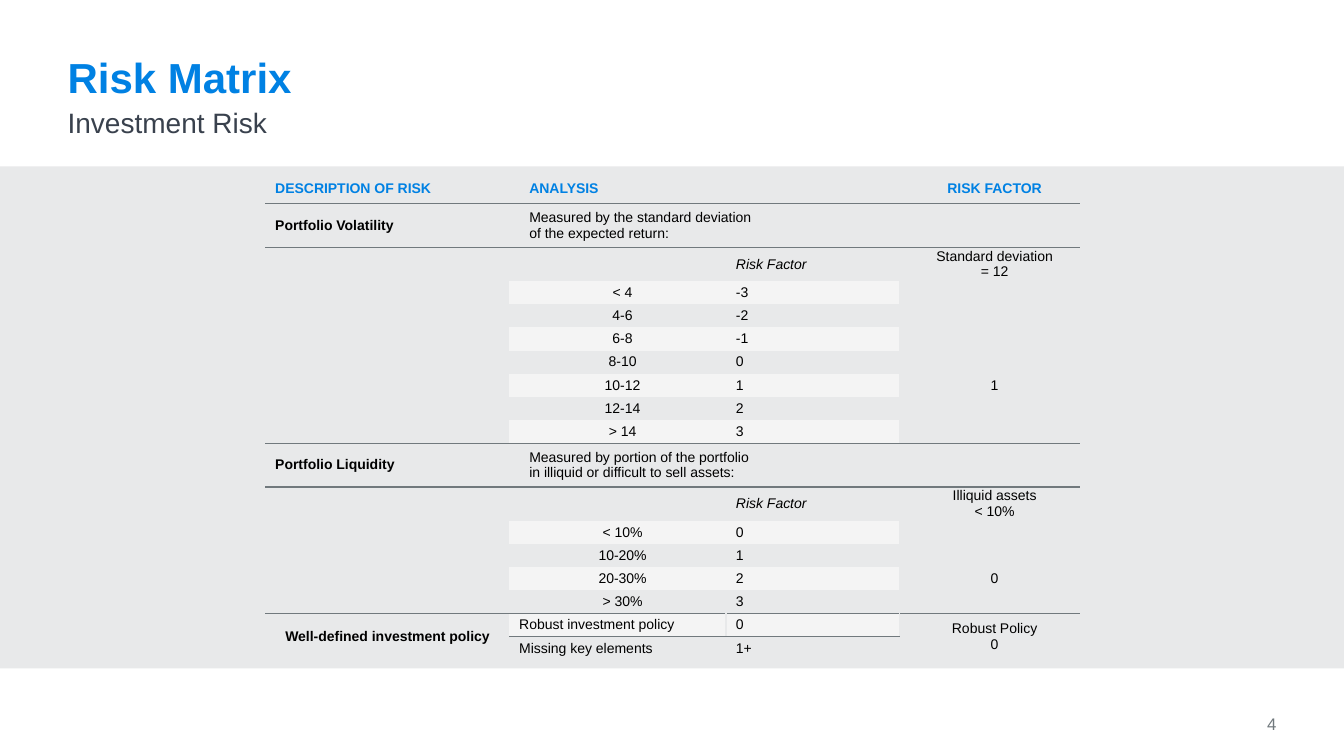
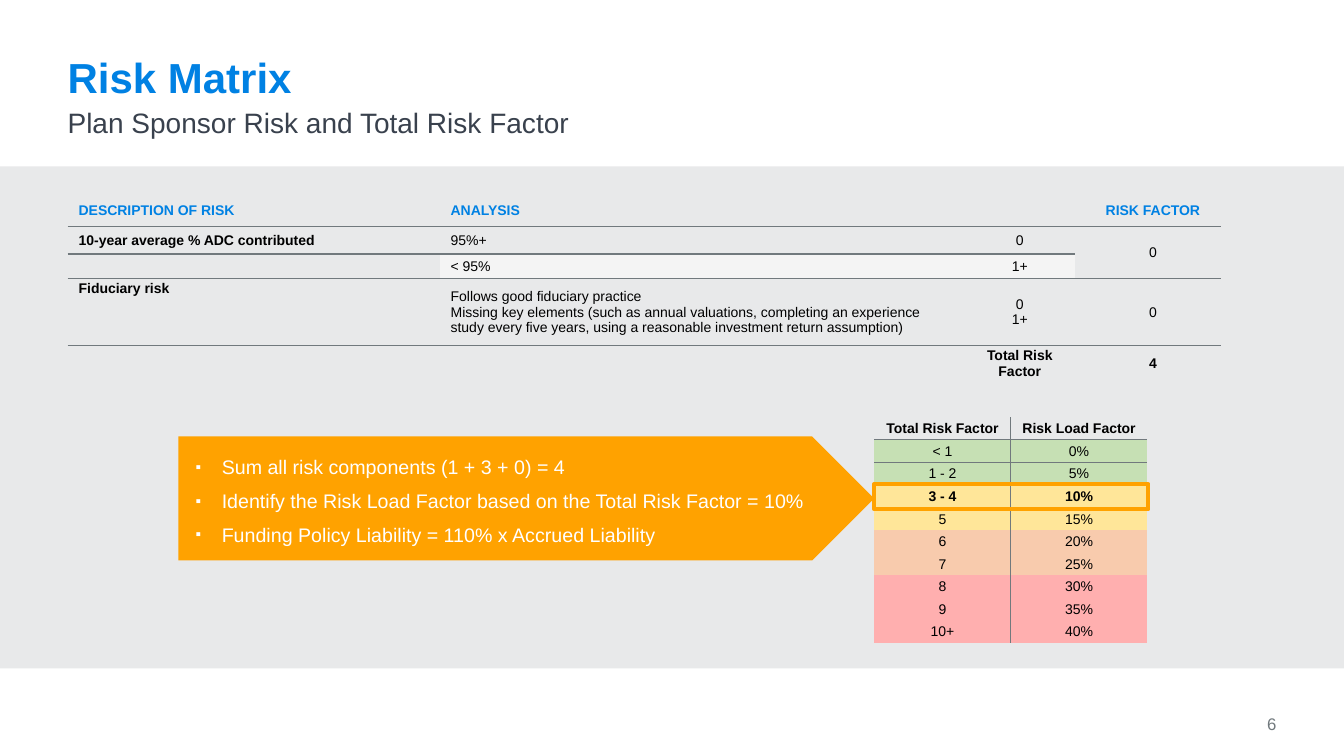
from dataclasses import dataclass, replace
from typing import NamedTuple, Optional, Sequence

from lxml import etree
from pptx import Presentation
from pptx import util as u
from pptx.dml.color import RGBColor
from pptx.enum import shapes, text
from pptx.oxml.ns import qn

SLIDE_W, SLIDE_H = 13.33, 7.5
MARGIN = 0.67
FONT = "Arial"
BLUE, SLATE, GREY, BLACK, WHITE = "0081E3", "39414D", "71797D", "000000", "FFFFFF"
PANEL, STRIPE, ORANGE = "E8E9EA", "F4F4F4", "FFA200"
GREEN, YELLOW, PEACH, RED = "C6E0B4", "FFE699", "F8CBAD", "FFAFAF"
PLAIN_TABLE = "{2D5ABB26-0587-4C30-8999-92F81FD0307C}"
LEFT, CENTER, RIGHT = text.PP_ALIGN.LEFT, text.PP_ALIGN.CENTER, text.PP_ALIGN.RIGHT
TOP, MIDDLE, BOTTOM = text.MSO_ANCHOR.TOP, text.MSO_ANCHOR.MIDDLE, text.MSO_ANCHOR.BOTTOM


class Box(NamedTuple):
    left: float
    top: float
    width: float
    height: float

    def lengths(self) -> list:
        return [u.Inches(value) for value in self]


class Style(NamedTuple):
    size: float
    color: str
    bold: bool = False
    italic: bool = False


class Rule(NamedTuple):
    """A line after a row ("B") or a column ("R"), over the given cells."""
    side: str
    edge: int
    cells: Sequence[int]
    color: str = GREY


@dataclass(frozen=True)
class Cell:
    words: str = ""
    align: text.PP_ALIGN = LEFT
    bold: bool = False
    italic: bool = False
    color: str = BLACK
    fill: Optional[str] = None
    margins: Optional[tuple] = None
    anchor: text.MSO_ANCHOR = MIDDLE
    rows: int = 1
    cols: int = 1


@dataclass(frozen=True)
class Grid:
    left: float
    top: float
    columns: list
    rows: list
    cells: list
    rules: list
    margins: tuple
    indent: float = 0.1


EMPTY = Cell()
ROOMY = (0.1, 0.05, 0.1, 0.05)
TIGHT = (0.01, 0.01, 0.01, 0)
FLUSH = (0, 0, 0, 0)
TITLE, SUBTITLE = Style(30, BLUE, True), Style(20, SLATE)
PAGE_NUMBER, CALLOUT = Style(12, GREY), Style(14, WHITE)


def rgb(color: str) -> RGBColor:
    return RGBColor.from_string(color)


def write(paragraph, words: str, style: Style) -> None:
    """Fill a paragraph; line breaks and empty ends take the same size."""
    paragraph.text = words
    for run in paragraph.runs:
        formats = dict(name=FONT, size=u.Pt(style.size), bold=style.bold, italic=style.italic)
        for key, value in formats.items():
            setattr(run.font, key, value)
        run.font.color.rgb = rgb(style.color)
    size = str(int(style.size * 100))
    for line_break in paragraph._p.findall(qn("a:br")):
        etree.SubElement(line_break, qn("a:rPr"), sz=size)
    etree.SubElement(paragraph._p, qn("a:endParaRPr"), sz=size)


def set_margins(target, margins: tuple) -> None:
    for side, value in zip(("left", "top", "right", "bottom"), margins):
        setattr(target, f"margin_{side}", u.Inches(value))


def add_text(slide, box: Box, lines: list, style: Style, align=LEFT, anchor=TOP,
             spacing: float = 1, bullet: str = "") -> None:
    frame = slide.shapes.add_textbox(*box.lengths()).text_frame
    frame.word_wrap = True
    frame.vertical_anchor = anchor
    set_margins(frame, FLUSH)
    for number, line in enumerate(lines):
        paragraph = frame.add_paragraph() if number else frame.paragraphs[0]
        if bullet:
            add_bullet(paragraph, bullet, style.color)
        paragraph.alignment = align
        paragraph.line_spacing = spacing
        if number:
            paragraph.space_before = u.Pt(9)
        write(paragraph, line, style)


def add_bullet(paragraph, mark: str, color: str) -> None:
    properties = paragraph._p.get_or_add_pPr()
    indent = u.Inches(0.26)
    properties.set("marL", str(indent))
    properties.set("indent", str(-indent))
    bullet_color = etree.SubElement(properties, qn("a:buClr"))
    etree.SubElement(bullet_color, qn("a:srgbClr"), val=color)
    etree.SubElement(properties, qn("a:buSzPct"), val="80000")
    etree.SubElement(properties, qn("a:buFont"), typeface=FONT)
    etree.SubElement(properties, qn("a:buChar"), char=mark)


def add_block(slide, kind, box: Box, fill: Optional[str] = None,
              line: Optional[str] = None) -> None:
    block = slide.shapes.add_shape(kind, *box.lengths())
    block.shadow.inherit = False
    if fill:
        block.fill.solid()
        block.fill.fore_color.rgb = rgb(fill)
    else:
        block.fill.background()
    if line:
        block.line.color.rgb = rgb(line)
        block.line.width = u.Pt(3)
    else:
        block.line.fill.background()


def add_border(cell, side: str, color: str) -> None:
    properties = cell._tc.get_or_add_tcPr()
    border = etree.Element(qn(f"a:ln{side}"), w=str(u.Pt(1)))
    fill = etree.SubElement(border, qn("a:solidFill"))
    etree.SubElement(fill, qn("a:srgbClr"), val=color)
    properties.insert(sum("}ln" in child.tag for child in properties), border)


def draw_rule(table, rule: Rule) -> None:
    """Set the line on both cells that share the edge."""
    for position in rule.cells:
        for step, side in enumerate("BT" if rule.side == "B" else "RL"):
            edge = rule.edge + step
            row, column = (edge, position) if rule.side == "B" else (position, edge)
            add_border(table.cell(row, column), side, rule.color)


def fill_cell(target, cell: Cell, grid: Grid) -> None:
    set_margins(target, cell.margins or (grid.margins if cell.words else FLUSH))
    target.vertical_anchor = cell.anchor
    paragraph = target.text_frame.paragraphs[0]
    paragraph.alignment = cell.align
    paragraph._p.get_or_add_pPr().set("marL", str(u.Inches(grid.indent)))
    write(paragraph, cell.words, Style(10, cell.color, cell.bold, cell.italic))
    if cell.fill:
        target.fill.solid()
        target.fill.fore_color.rgb = rgb(cell.fill)
    else:
        target.fill.background()


def add_grid(slide, grid: Grid) -> None:
    box = Box(grid.left, grid.top, sum(grid.columns), sum(grid.rows))
    table = slide.shapes.add_table(len(grid.rows), len(grid.columns), *box.lengths()).table
    table.first_row = table.horz_banding = False
    table._tbl.tblPr.find(qn("a:tableStyleId")).text = PLAIN_TABLE
    for column, width in zip(table.columns, grid.columns):
        column.width = u.Inches(width)
    for row, height in zip(table.rows, grid.rows):
        row.height = u.Inches(height)
    for r, line in enumerate(grid.cells):
        for c, cell in enumerate(line):
            target = table.cell(r, c)
            fill_cell(target, cell, grid)
            if cell.rows * cell.cols > 1:
                target.merge(table.cell(r + cell.rows - 1, c + cell.cols - 1))
    for rule in grid.rules:
        draw_rule(table, rule)


def start_slide(deck, subtitle: str, number: str):
    slide = deck.slides.add_slide(deck.slide_layouts[6])
    add_block(slide, shapes.MSO_SHAPE.RECTANGLE,
              Box(0, SLIDE_H * 0.22, SLIDE_W, 4.98), PANEL)
    width = SLIDE_W - 2 * MARGIN
    add_text(slide, Box(MARGIN, 0.57, width, 0.45), ["Risk Matrix"], TITLE, spacing=0.9)
    add_text(slide, Box(MARGIN, 1.08, width, 0.61), [subtitle], SUBTITLE, spacing=0.9)
    add_text(slide, Box(12.08, 7.03, 0.58, 0.25), [number], PAGE_NUMBER, RIGHT, BOTTOM)
    return slide


def heading_row(analysis_margins: tuple) -> list:
    heading = Cell(bold=True, color=BLUE)
    return [replace(heading, words="DESCRIPTION OF RISK"),
            replace(heading, words="ANALYSIS", cols=2, margins=analysis_margins), EMPTY,
            replace(heading, words="RISK FACTOR", align=CENTER)]


def risk_section(name: str, measure: str, finding: str, ranges: list, first: int,
                 chosen: int) -> list:
    """Rows of one risk: its measure, then ranges with rising factors."""
    rows = [[Cell(name, bold=True), Cell(measure, cols=2, margins=ROOMY), EMPTY, EMPTY],
            [EMPTY, EMPTY, Cell("Risk Factor", italic=True), Cell(finding, CENTER)]]
    for step, limits in enumerate(ranges):
        fill = None if step % 2 else STRIPE
        factor = str(first + step)
        rows.append([EMPTY, Cell(limits, CENTER, fill=fill), Cell(factor, fill=fill),
                     Cell(factor, CENTER) if step == chosen else EMPTY])
    return rows


def investment_slide(deck) -> None:
    slide = start_slide(deck, "Investment Risk", "4")
    volatility = risk_section(
        "Portfolio Volatility", "Measured by the standard deviation\nof the expected return:",
        "Standard deviation\n= 12",
        ["< 4", "4-6", "6-8", "8-10", "10-12", "12-14", "> 14"], -3, 4)
    liquidity = risk_section(
        "Portfolio Liquidity",
        "Measured by portion of the portfolio\nin illiquid or difficult to sell assets:",
        "Illiquid assets\n< 10%", ["< 10%", "10-20%", "20-30%", "> 30%"], 0, 2)
    # The chosen liquidity range scores zero on the summary side.
    liquidity[4][3] = Cell("0", CENTER)
    policy = [
        [Cell("Well-defined investment policy", bold=True, margins=ROOMY, rows=2),
         Cell("Robust investment policy", fill=STRIPE), Cell("0", fill=STRIPE),
         Cell("Robust Policy\n0", CENTER, margins=ROOMY, rows=2)],
        [EMPTY, Cell("Missing key elements"), Cell("1+"), EMPTY]]
    section, step = [0.41, 0.33], 0.23
    add_grid(slide, Grid(
        2.63, 1.73, [2.42, 2.15, 1.72, 1.79],
        [0.29] + section + [step] * 7 + section + [step] * 6,
        [heading_row(ROOMY)] + volatility + liquidity + policy,
        [Rule("R", 1, [16], PANEL)] + [Rule("B", row, range(4)) for row in (0, 9, 15)],
        FLUSH))


def sponsor_slide(deck) -> None:
    slide = start_slide(deck, "Plan Sponsor Risk and Total Risk Factor", "6")
    loads = [("< 1", "0%", GREEN), ("1 - 2", "5%", GREEN), ("3 - 4", "10%", YELLOW),
             ("5", "15%", YELLOW), ("6", "20%", PEACH), ("7", "25%", PEACH),
             ("8", "30%", RED), ("9", "35%", RED), ("10+", "40%", RED)]
    chosen, load_left, load_top, load_step = 3, 8.67, 4.14, 2.24 / 10
    load_cells = [[Cell(head, CENTER, True) for head in ("Total Risk Factor", "Risk Load Factor")]]
    for row, (factor, load, fill) in enumerate(loads, 1):
        load_cells.append([Cell(words, CENTER, row == chosen, fill=fill)
                           for words in (factor, load)])
    add_grid(slide, Grid(load_left, load_top, [2.71 / 2] * 2, [load_step] * 10, load_cells,
                         [Rule("R", 0, range(10)), Rule("B", 0, range(2))], TIGHT, 0))

    add_block(slide, shapes.MSO_SHAPE.PENTAGON, Box(1.77, 4.33, 6.9, 1.23), ORANGE)
    add_text(slide, Box(1.94, 4.54, 6.2, 0.9),
             ["Sum all risk components (1 + 3 + 0) = 4",
              "Identify the Risk Load Factor based on the Total Risk Factor = 10%",
              "Funding Policy Liability = 110% x Accrued Liability"],
             CALLOUT, spacing=0.9, bullet="▪")

    practice = ("Follows good fiduciary practice\nMissing key elements (such as annual valuations, "
                "completing an experience study every five years, using a reasonable "
                "investment return assumption)")
    sponsor_cells = [
        heading_row(TIGHT),
        [Cell("10-year average % ADC contributed", bold=True), Cell("95%+"),
         Cell("0", CENTER), Cell("0", CENTER, rows=2)],
        [EMPTY, Cell("< 95%", fill=STRIPE), Cell("1+", CENTER, fill=STRIPE), EMPTY],
        [Cell("Fiduciary risk", bold=True, anchor=TOP, margins=(0.01, 0.03, 0.01, 0)),
         Cell(practice), Cell("0\n1+", CENTER), Cell("0", CENTER)],
        [EMPTY, EMPTY, Cell("Total Risk Factor", CENTER, True), Cell("4", CENTER, True)]]
    add_grid(slide, Grid(MARGIN, 1.93, [3.69, 5.11, 1.19, 1.45],
                         [0.32, 0.27, 0.24, 0.67, 0.34], sponsor_cells,
                         [Rule("B", 0, range(4)), Rule("B", 2, range(4)),
                          Rule("B", 3, (2, 3))], TIGHT))
    add_block(slide, shapes.MSO_SHAPE.RECTANGLE,
              Box(load_left, load_top + chosen * load_step - 0.01, 2.72, 0.25), line=ORANGE)


def main() -> None:
    deck = Presentation()
    deck.slide_width, deck.slide_height = u.Inches(SLIDE_W), u.Inches(SLIDE_H)
    investment_slide(deck)
    sponsor_slide(deck)
    deck.save("out.pptx")


if __name__ == "__main__":
    main()
